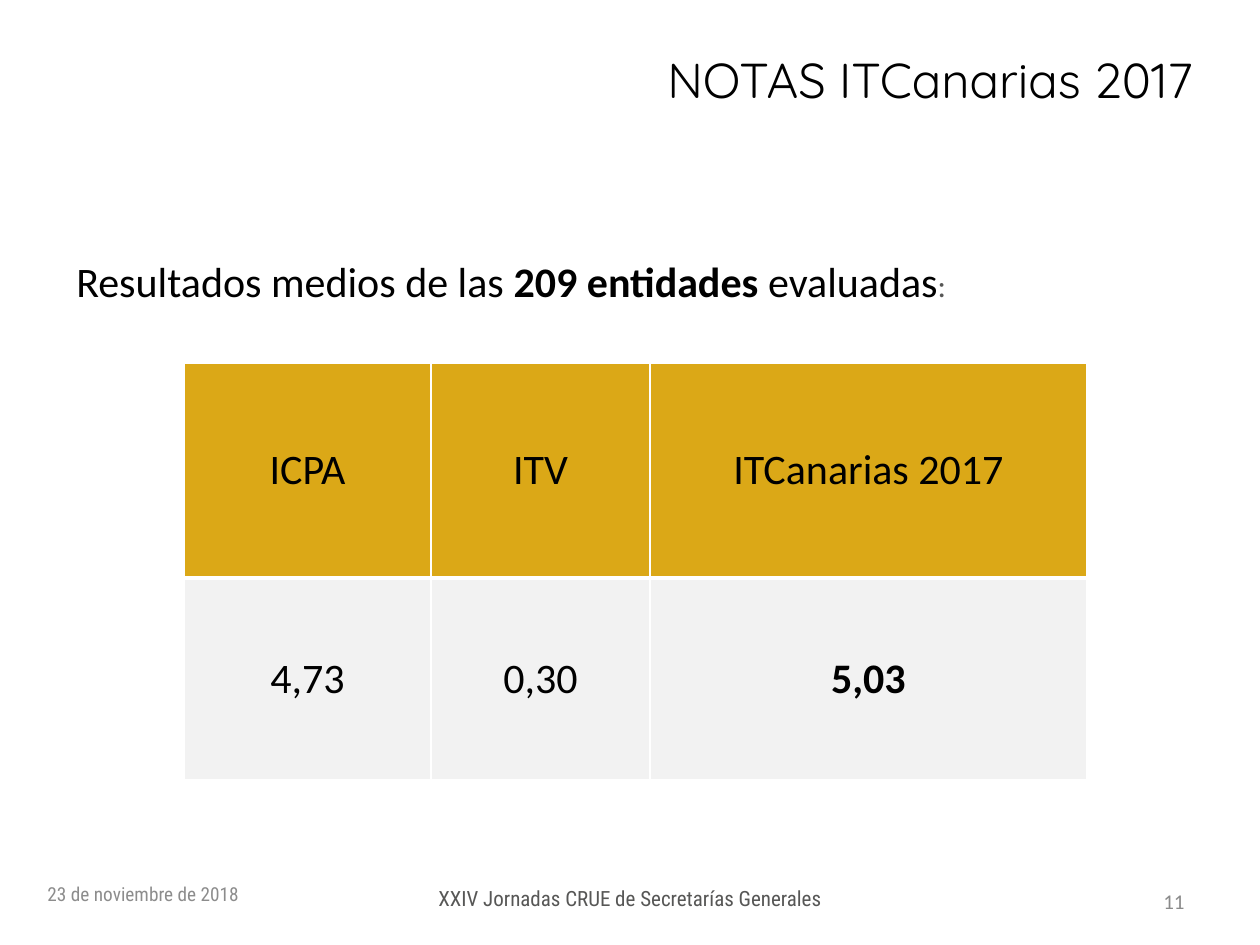
import pptx
import pptx.dml.color
import pptx.enum.text
import pptx.oxml
import pptx.oxml.ns
import pptx.util

PX = 914400 / 126
ALIGN = pptx.enum.text.PP_ALIGN
MIDDLE = pptx.enum.text.MSO_ANCHOR.MIDDLE
TOP = pptx.enum.text.MSO_ANCHOR.TOP
BODY = {"name": "Calibri", "size": 24, "color": "000000", "bold": False}


def px(n):
    """Turn whole pixels into EMU."""
    return pptx.util.Emu(round(n * PX))


def rgb(value):
    """Turn a hex string into a colour."""
    return pptx.dml.color.RGBColor.from_string(value)


def add_run(p, text, fmt):
    """Add a run and set its font from a dict."""
    r = p.add_run()
    r.text = text
    for key, value in fmt.items():
        if key == "color":
            r.font.color.rgb = rgb(value)
        else:
            setattr(r.font, key, pptx.util.Pt(value) if key == "size" else value)


def fill_frame(tf, runs, align, anchor=MIDDLE, spacing=None):
    """Write one paragraph of runs into a text frame."""
    frame_format = {
        "word_wrap": True,
        "auto_size": pptx.enum.text.MSO_AUTO_SIZE.NONE,
        "vertical_anchor": anchor,
    }
    for key, value in frame_format.items():
        setattr(tf, key, value)
    p = tf.paragraphs[0]
    p.alignment = align
    if spacing:
        p.line_spacing = spacing
    for text, fmt in runs:
        add_run(p, text, fmt)


def add_title(s, box, text, fmt):
    """Move the title placeholder and write its text."""
    sp = s.shapes.title
    for key, value in zip(("left", "top", "width", "height"), box):
        setattr(sp, key, px(value))
    fill_frame(sp.text_frame, [(text, fmt)], ALIGN.CENTER)


def add_text(s, box, runs, align, **layout):
    """Add a text box with one paragraph."""
    sp = s.shapes.add_textbox(*map(px, box))
    fill_frame(sp.text_frame, runs, align, **layout)


def set_borders(cell, color, widths):
    """Draw left, right, top and bottom cell borders."""
    tc_pr = cell._tc.get_or_add_tcPr()
    for side, width in zip("LRTB", widths):
        tc_pr.append(pptx.oxml.parse_xml(
            f'<a:ln{side} {pptx.oxml.ns.nsdecls("a")} w="{pptx.util.Pt(width)}">'
            f'<a:solidFill><a:srgbClr val="{color}"/></a:solidFill></a:ln{side}>'))


def add_scores(s, left, top, widths, heights, rows):
    """Add the score table with a gold header and a grey row."""
    table = s.shapes.add_table(
        len(rows), len(widths), px(left), px(top), px(sum(widths)), px(sum(heights))).table
    for column, width in zip(table.columns, widths):
        column.width = px(width)
    for i, (height, texts) in enumerate(zip(heights, rows)):
        table.rows[i].height = px(height)
        for j, text in enumerate(texts):
            cell = table.cell(i, j)
            set_borders(cell, "FFFFFF", (1, 1, 1, 1) if i else (1, 1, 1, 3))
            cell.fill.solid()
            cell.fill.fore_color.rgb = rgb("F2F2F2" if i else "DBA817")
            cell.vertical_anchor = MIDDLE
            if i:
                margins = {"margin_left": 1, "margin_right": 1, "margin_top": 1, "margin_bottom": 0}
                for key, value in margins.items():
                    setattr(cell, key, px(value))
            p = cell.text_frame.paragraphs[0]
            p.alignment = ALIGN.CENTER
            is_total = i > 0 and j == len(texts) - 1
            add_run(p, text, {**BODY, "bold": is_total})


def main():
    """Build the slide and save it."""
    prs = pptx.Presentation()
    prs.slide_width, prs.slide_height = px(1260), px(945)
    s = prs.slides.add_slide(prs.slide_layouts[5])

    add_title(s, (600, 0, 660, 158), "NOTAS ITCanarias 2017",
              {"name": "Quicksand", "size": 28, "color": "000000"})
    add_text(s, (64, 224, 1111, 81), [
        ("Resultados medios de las ", BODY),
        ("209 entidades", {**BODY, "bold": True}),
        (" evaluadas", BODY),
        (":", {**BODY, "size": 18, "color": "575756"}),
    ], ALIGN.JUSTIFY, anchor=TOP, spacing=1.5)
    add_scores(s, 184, 363, (247, 219, 437), (215, 202), [
        ("ICPA", "ITV", "ITCanarias 2017"),
        ("4,73", "0,30", "5,03"),
    ])

    footer = {"name": "Roboto Condensed", "size": 12, "color": "575756"}
    add_text(s, (35, 869, 294, 50),
             [("23 de noviembre de 2018", {**footer, "size": 11, "color": "8C8C8C"})], ALIGN.LEFT)
    add_text(s, (382, 879, 496, 39),
             [("XXIV Jornadas CRUE de Secretarías Generales", footer)], ALIGN.CENTER, anchor=TOP)
    add_text(s, (1126, 876, 71, 50),
             [("11", {"name": "Calibri", "size": 12, "color": "8B8B8B"})], ALIGN.RIGHT)
    prs.save("out.pptx")


if __name__ == "__main__":
    main()
